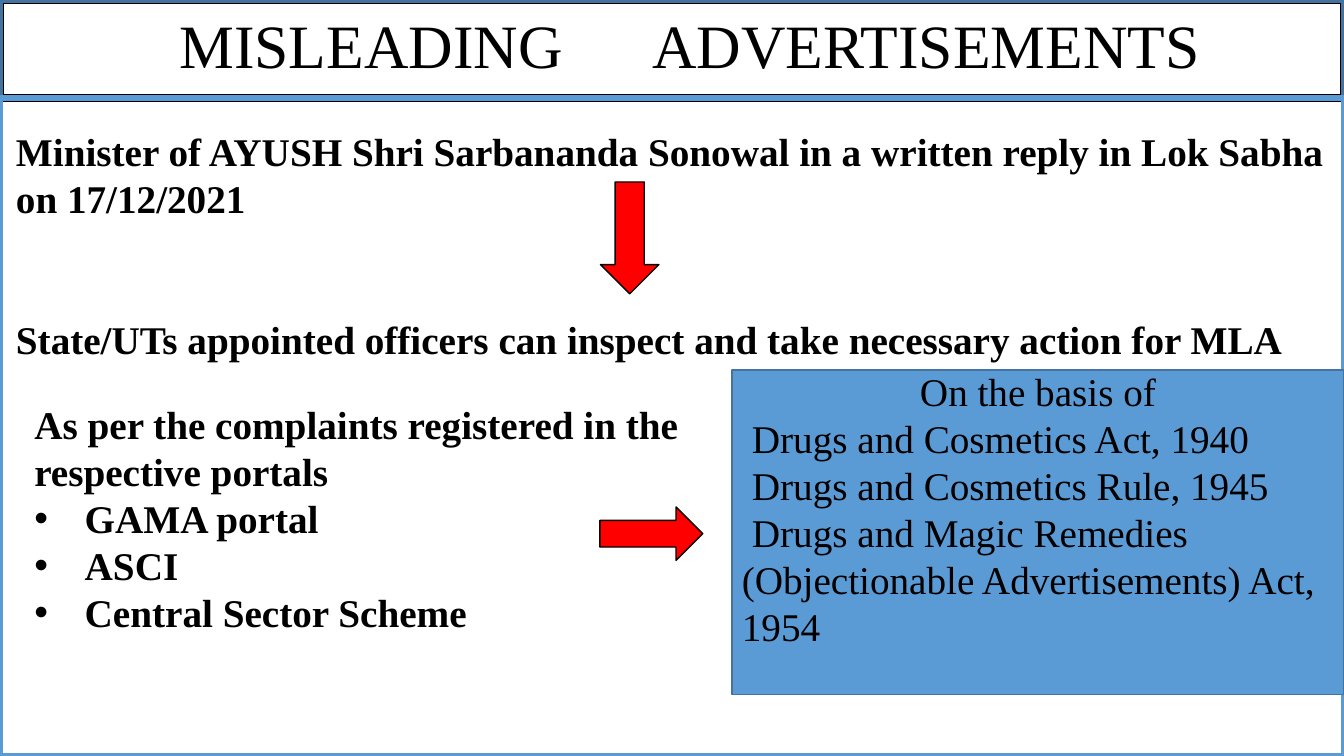
from lxml import etree
from pptx import Presentation
from pptx.dml.color import RGBColor
from pptx.enum.shapes import MSO_SHAPE
from pptx.enum.text import MSO_ANCHOR, MSO_AUTO_SIZE, PP_ALIGN
from pptx.oxml.ns import qn
from pptx.util import Inches, Pt

RECTANGLE = MSO_SHAPE.RECTANGLE
RIGHT_ARROW = MSO_SHAPE.RIGHT_ARROW
TOP, MIDDLE = MSO_ANCHOR.TOP, MSO_ANCHOR.MIDDLE
LEFT, CENTER = PP_ALIGN.LEFT, PP_ALIGN.CENTER
NO_AUTOFIT = MSO_AUTO_SIZE.NONE

FONT = "Times New Roman"
BLACK, RED, BLUE, DARK_BLUE = "000000", "FF0000", "5B9BD5", "43739E"
SLIDE_WIDTH, SLIDE_HEIGHT = 13.33, 7.5
TITLE_HEIGHT = 0.97


def color(hex_code):
    return RGBColor.from_string(hex_code)


def place(shape, box):
    shape.left, shape.top, shape.width, shape.height = map(Inches, box)


def set_line(shape, hex_code, width):
    shape.line.color.rgb = color(hex_code)
    shape.line.width = Pt(width)


def add_shape(slide, kind, box, line, line_width, fill=None):
    shape = slide.shapes.add_shape(kind, *map(Inches, box))
    shape.shadow.inherit = False
    if fill:
        shape.fill.solid()
        shape.fill.fore_color.rgb = color(fill)
    else:
        shape.fill.background()
    set_line(shape, line, line_width)
    return shape


def set_indent(paragraph, margin, indent):
    properties = paragraph._p.get_or_add_pPr()
    properties.set("marL", str(Inches(margin)))
    properties.set("indent", str(Inches(indent)))
    return properties


def set_bullet(paragraph, bullet):
    if bullet:
        properties = set_indent(paragraph, 0.5, -0.5)
        etree.SubElement(properties, qn("a:buFont"), typeface="Arial")
        etree.SubElement(properties, qn("a:buChar"), char=bullet)
    else:
        properties = set_indent(paragraph, 0, 0)
        etree.SubElement(properties, qn("a:buNone"))


def set_tab(paragraph, position):
    tabs = etree.SubElement(paragraph._p.get_or_add_pPr(), qn("a:tabLst"))
    etree.SubElement(tabs, qn("a:tab"), pos=str(Inches(position)), algn="l")


def write(frame, lines, anchor=TOP):
    frame.word_wrap = True
    frame.auto_size = NO_AUTOFIT
    frame.vertical_anchor = anchor
    frame.text = "\n".join(lines)
    return frame.paragraphs


def style(paragraph, size=28, bold=False, alignment=LEFT):
    paragraph.alignment = alignment
    paragraph.space_before = Pt(0)
    paragraph.font.name = FONT
    paragraph.font.size = Pt(size)
    paragraph.font.bold = bold
    paragraph.font.color.rgb = color(BLACK)


def add_title(slide, box):
    title = slide.shapes.title
    place(title, box)
    set_line(title, BLACK, 6)
    title.text_frame.margin_left = Inches(1.78)
    paragraph = write(title.text_frame, ["MISLEADING\tADVERTISEMENTS"], MIDDLE)[0]
    set_tab(paragraph, 4.69)
    style(paragraph, size=44)
    paragraph.line_spacing = 0.9
    add_shape(slide, RECTANGLE, box, DARK_BLUE, 4.5)


def add_statements(slide, box):
    left, top, width, height = box
    text_box = slide.shapes.add_textbox(*map(Inches, box))
    reply, action = write(text_box.text_frame, [
        "Minister of AYUSH Shri Sarbananda Sonowal in a written reply in Lok Sabha on 17/12/2021",
        "State/UTs appointed officers can inspect and take necessary action for MLA",
    ])
    style(reply, bold=True)
    style(action, bold=True)
    action.space_before = Pt(67.4)
    arrow_box = (left + 5.63, top + 0.86, 1.11, 0.58)
    arrow = add_shape(slide, RIGHT_ARROW, arrow_box, BLACK, 1, RED)
    arrow.rotation = 90


def add_portals(slide, box):
    left, top, width, height = box
    body = slide.placeholders[1]
    place(body, box)
    paragraphs = write(body.text_frame, [
        "As per the complaints registered in the respective portals",
        "GAMA portal",
        "ASCI",
        "Central Sector Scheme",
    ])
    for index, paragraph in enumerate(paragraphs):
        set_bullet(paragraph, "•" if index else None)
        style(paragraph, bold=True)
    arrow_box = (left + 5.71, top + 1.11, 1.02, 0.53)
    add_shape(slide, RIGHT_ARROW, arrow_box, BLACK, 1, RED)


def add_legal_basis(slide, box):
    panel = add_shape(slide, RECTANGLE, box, DARK_BLUE, 1, BLUE)
    panel.text_frame.margin_bottom = Inches(0.52)
    heading, *acts = write(panel.text_frame, [
        "On the basis of",
        "Drugs and Cosmetics Act, 1940",
        "Drugs and Cosmetics Rule, 1945",
        "Drugs and Magic Remedies (Objectionable Advertisements) Act, 1954",
    ], MIDDLE)
    style(heading, alignment=CENTER)
    for act in acts:
        set_indent(act, 0, 0.1)
        style(act)


def main():
    presentation = Presentation()
    presentation.slide_width = Inches(SLIDE_WIDTH)
    presentation.slide_height = Inches(SLIDE_HEIGHT)
    slide = presentation.slides.add_slide(presentation.slide_layouts[1])
    add_title(slide, (0, 0, SLIDE_WIDTH, TITLE_HEIGHT))
    content_box = (0, TITLE_HEIGHT, SLIDE_WIDTH, SLIDE_HEIGHT - TITLE_HEIGHT)
    add_shape(slide, RECTANGLE, content_box, BLUE, 4.5)
    add_statements(slide, (0.06, 1.21, 13.21, 2.46))
    add_portals(slide, (0.24, 3.92, 6.9, 2.46))
    add_legal_basis(slide, (7.26, 3.67, 6.07, 3.22))
    presentation.save("out.pptx")


if __name__ == "__main__":
    main()
